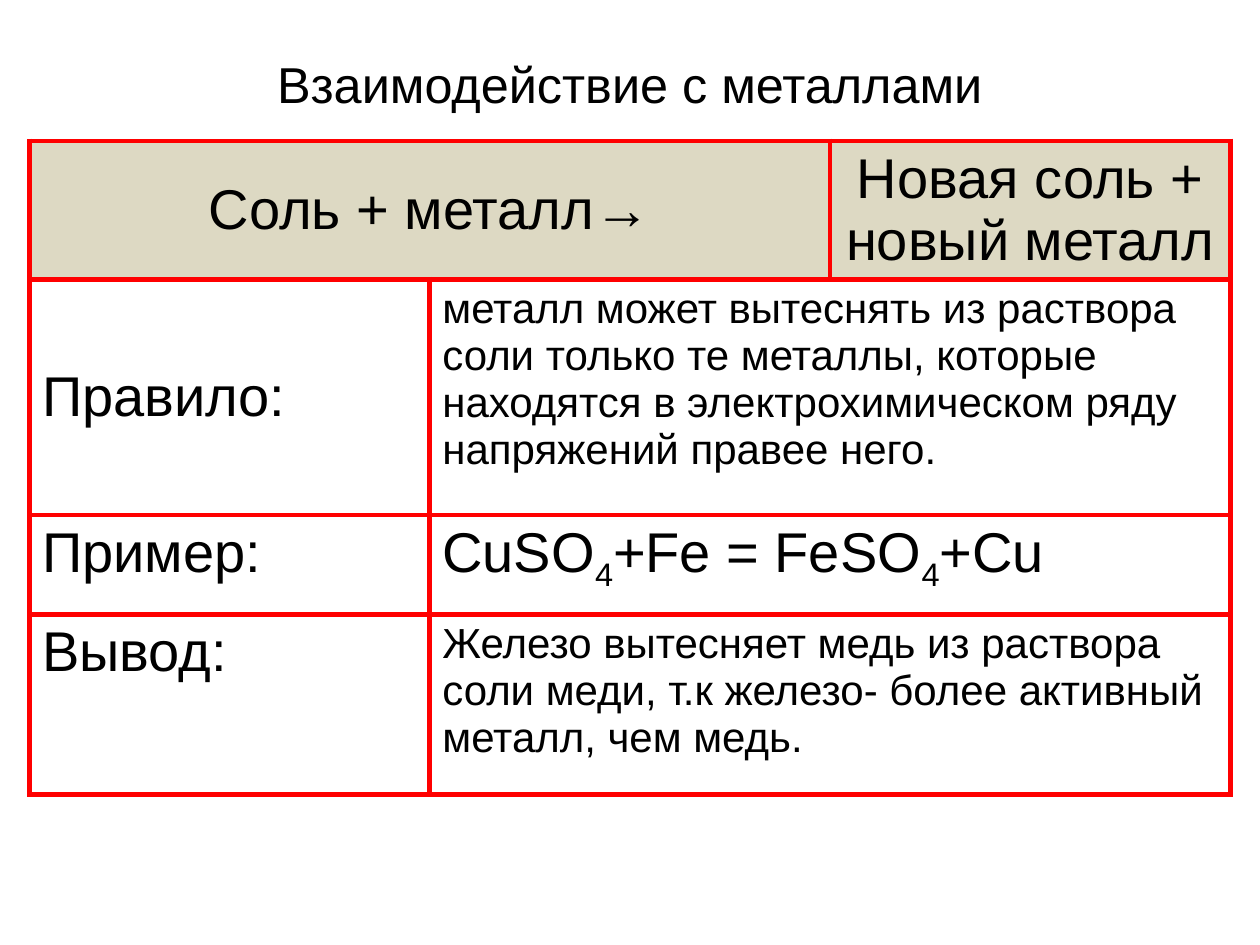
from lxml.etree import SubElement
from pptx import Presentation
from pptx.dml.color import RGBColor
from pptx.enum.shapes import MSO_SHAPE as Shape
from pptx.enum.text import MSO_ANCHOR as Anchor, PP_ALIGN as Align
from pptx.oxml.ns import qn
from pptx.util import Pt

COLORS = {"text": "000000", "border": "FF0000", "header": "DDD9C3"}
FONT = "Arial"
LARGE, SMALL = 32, 24
COLUMN_WIDTH = 228.8
ROW_HEIGHTS = [71.3, 134.8, 56.7, 103]


def color(name):
    return RGBColor.from_string(COLORS[name])


def write_text(frame, parts, size=LARGE, align=Align.LEFT):
    frame.word_wrap = True
    para = frame.paragraphs[0]
    para.alignment = align
    for index, part in enumerate(parts):
        span = para.add_run()
        span.text = part
        span.font.name = FONT
        span.font.size = Pt(size)
        span.font.color.rgb = color("text")
        if index % 2:
            span._r.get_or_add_rPr().set("baseline", "-25000")


def add_title(page, text):
    box = page.shapes.add_shape(
        Shape.ROUNDED_RECTANGLE, Pt(140.75), Pt(21.6), Pt(438.5), Pt(51.8)
    )
    box.shadow.inherit = False
    box.fill.background()
    box.line.fill.background()
    box.text_frame.vertical_anchor = Anchor.MIDDLE
    write_text(box.text_frame, [text], size=28.8, align=Align.CENTER)


def add_borders(cell, width=3):
    properties = cell._tc.get_or_add_tcPr()
    for side in ("lnL", "lnR", "lnT", "lnB"):
        line = SubElement(properties, qn(f"a:{side}"), w=str(Pt(width)))
        fill = SubElement(line, qn("a:solidFill"))
        SubElement(fill, qn("a:srgbClr"), val=COLORS["border"])


def add_grid(page):
    frame = page.shapes.add_table(
        len(ROW_HEIGHTS), 3, Pt(16.8), Pt(80.6), Pt(3 * COLUMN_WIDTH), Pt(sum(ROW_HEIGHTS))
    )
    table = frame.table
    table.first_row = table.horz_banding = False
    for column in table.columns:
        column.width = Pt(COLUMN_WIDTH)
    for row, height in zip(table.rows, ROW_HEIGHTS):
        row.height = Pt(height)
    for cell in table.iter_cells():
        add_borders(cell)
        cell.fill.background()
    return table


def fill_header(table, left, right):
    reagents, products = table.cell(0, 0), table.cell(0, 2)
    reagents.merge(table.cell(0, 1))
    for cell, text in ((reagents, left), (products, right)):
        cell.fill.solid()
        cell.fill.fore_color.rgb = color("header")
        write_text(cell.text_frame, [text], align=Align.CENTER)
    reagents.vertical_anchor = Anchor.MIDDLE
    reagents.margin_top = reagents.margin_bottom = Pt(0)


def fill_row(table, row, label, parts, size=SMALL, anchor=Anchor.TOP):
    heading, body = table.cell(row, 0), table.cell(row, 1)
    body.merge(table.cell(row, 2))
    heading.vertical_anchor = anchor
    write_text(heading.text_frame, [label])
    write_text(body.text_frame, parts, size=size)


def main():
    deck = Presentation()
    deck.slide_width, deck.slide_height = Pt(720), Pt(540)
    page = deck.slides.add_slide(deck.slide_layouts[6])
    add_title(page, "Взаимодействие с металлами")
    table = add_grid(page)
    fill_header(table, "Соль + металл→", "Новая соль + новый металл")
    rule = (
        "металл может вытеснять из раствора соли только те металлы, которые "
        "находятся в электрохимическом ряду напряжений правее него."
    )
    conclusion = (
        "Железо вытесняет медь из раствора соли меди, т.к железо- более "
        "активный металл, чем медь."
    )
    fill_row(table, 1, "Правило:", [rule], anchor=Anchor.MIDDLE)
    fill_row(table, 2, "Пример:", ["CuSO", "4", "+Fe = FeSO", "4", "+Cu"], size=LARGE)
    fill_row(table, 3, "Вывод:", [conclusion])
    deck.save("out.pptx")


if __name__ == "__main__":
    main()
